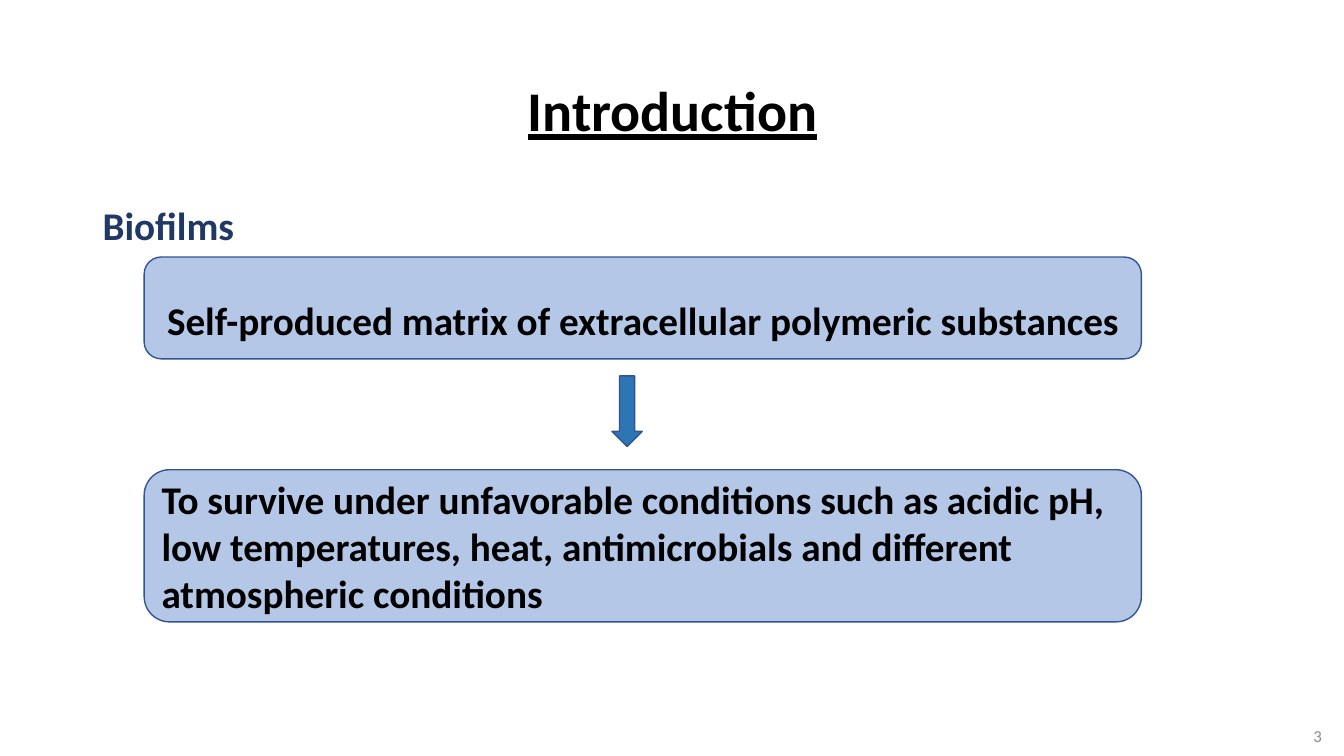
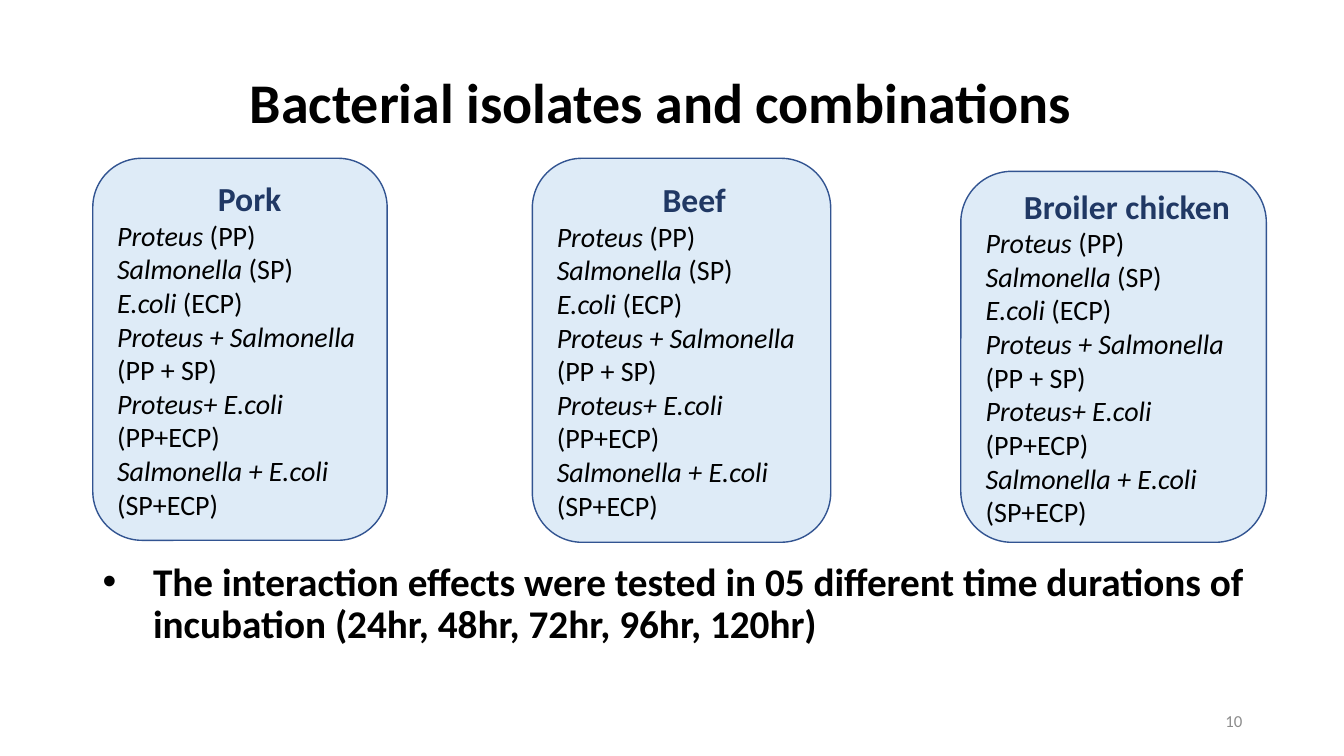
from pptx import Presentation
from pptx.dml.color import RGBColor
from pptx.enum.shapes import MSO_SHAPE
from pptx.enum.text import MSO_ANCHOR, PP_ALIGN
from pptx.oxml.ns import qn
from pptx.util import Inches, Pt
from lxml.etree import SubElement

FONT = "Calibri"
BLACK = RGBColor(0x00, 0x00, 0x00)
GREY = RGBColor(0x8C, 0x8C, 0x8C)
NAVY = RGBColor(0x20, 0x38, 0x64)
OUTLINE = RGBColor(0x32, 0x54, 0x91)
ARROW_BLUE = RGBColor(0x2E, 0x75, 0xB6)
MID_BLUE = RGBColor(0xB4, 0xC7, 0xE7)
PALE_BLUE = RGBColor(0xDE, 0xEB, 0xF7)

MARGIN = 0.92
ISOLATES = [
    ("Proteus", " (PP)"),
    ("Salmonella", " (SP)"),
    ("E.coli", " (ECP)"),
    ("Proteus + Salmonella ", "(PP + SP)"),
    ("Proteus+ E.coli ", "(PP+ECP)"),
    ("Salmonella + E.coli ", "(SP+ECP)"),
]


class Deck:
    """Holds the presentation, its style and the slide being built."""

    def __init__(self):
        self.prs = Presentation()
        self.prs.slide_width = Inches(13.33)
        self.prs.slide_height = Inches(7.5)
        self.slide = None

    def new_slide(self):
        self.slide = self.prs.slides.add_slide(self.prs.slide_layouts[6])

    def add_run(self, paragraph, text, size, color=BLACK, bold=False,
                italic=False, underline=False):
        run = paragraph.add_run()
        run.text = text
        font = run.font
        font.name, font.size, font.color.rgb = FONT, Pt(size), color
        font.bold, font.italic, font.underline = bold, italic, underline

    def indent(self, paragraph, left, first=0):
        properties = paragraph._p.get_or_add_pPr()
        properties.set("marL", str(Inches(left)))
        properties.set("indent", str(Inches(first)))
        return properties

    def text(self, at, text, size, align=PP_ALIGN.LEFT, anchor=MSO_ANCHOR.TOP,
             spacing=0.9, bullet=False, **style):
        box = self.slide.shapes.add_textbox(*map(Inches, at))
        frame = box.text_frame
        frame.word_wrap = True
        frame.vertical_anchor = anchor
        paragraph = frame.paragraphs[0]
        paragraph.alignment = align
        paragraph.line_spacing = spacing
        if bullet:
            properties = self.indent(paragraph, 0.5, -0.5)
            SubElement(properties, qn("a:buFont")).set("typeface", "Arial")
            SubElement(properties, qn("a:buChar")).set("char", "•")
        self.add_run(paragraph, text, size, **style)

    def title(self, at, text, align, underline=False):
        self.text(at, text, 40, align, MSO_ANCHOR.MIDDLE,
                  bold=True, underline=underline)

    def page_number(self, left, top, number):
        self.text((left, top, 3, 0.4), number, 12, PP_ALIGN.RIGHT,
                  MSO_ANCHOR.MIDDLE, spacing=1.0, color=GREY)

    def shape(self, kind, at, fill):
        shape = self.slide.shapes.add_shape(kind, *map(Inches, at))
        shape.shadow.inherit = False
        shape.fill.solid()
        shape.fill.fore_color.rgb = fill
        shape.line.color.rgb = OUTLINE
        shape.line.width = Pt(1)
        return shape

    def panel(self, at, fill):
        """Add a rounded box and return its text frame."""
        frame = self.shape(MSO_SHAPE.ROUNDED_RECTANGLE, at, fill).text_frame
        frame.word_wrap = True
        frame.vertical_anchor = MSO_ANCHOR.MIDDLE
        frame.paragraphs[0].alignment = PP_ALIGN.LEFT
        return frame

    def statement(self, top, height, text, align, spacing):
        frame = self.panel((1.43, top, 9.89, height), MID_BLUE)
        paragraph = frame.paragraphs[0]
        paragraph.alignment = align
        paragraph.line_spacing = spacing
        self.add_run(paragraph, text, 28, bold=True)

    def isolate_card(self, at, meat, heading_indent):
        frame = self.panel(at, PALE_BLUE)
        heading = frame.paragraphs[0]
        self.indent(heading, heading_indent)
        self.add_run(heading, meat, 24, NAVY, bold=True)
        for species, code in ISOLATES:
            paragraph = frame.add_paragraph()
            paragraph.alignment = PP_ALIGN.LEFT
            self.add_run(paragraph, species, 20, italic=True)
            self.add_run(paragraph, code, 20)


def build_introduction(deck):
    deck.new_slide()
    deck.title((MARGIN, 0.4, 11.5, 1.45), "Introduction", PP_ALIGN.CENTER,
               underline=True)
    deck.text((MARGIN, 2, 11.5, 0.55), "Biofilms", 28, color=NAVY, bold=True)
    deck.page_number(10.21, 7.1, "3")
    deck.statement(
        2.55, 1.01, "Self-produced matrix of extracellular polymeric substances",
        PP_ALIGN.CENTER, 1.5)
    deck.statement(
        4.66, 1.51,
        "To survive under unfavorable conditions such as acidic pH, "
        "low temperatures, heat, antimicrobials and different "
        "atmospheric conditions",
        PP_ALIGN.LEFT, 1.0)
    deck.shape(MSO_SHAPE.DOWN_ARROW, (6.07, 3.73, 0.3, 0.7), ARROW_BLUE)


def build_isolates(deck):
    deck.new_slide()
    deck.title((2.38, 0.32, 10, 1.45), "Bacterial isolates and combinations",
               PP_ALIGN.LEFT)
    deck.text(
        (MARGIN, 5.53, 11.65, 1.22),
        "The interaction effects were tested in 05 different time durations of "
        "incubation (24hr, 48hr, 72hr, 96hr, 120hr)",
        28, bullet=True, bold=True)
    deck.page_number(9.42, 6.95, "10")
    cards = [
        ((MARGIN, 1.57, 2.92, 3.79), "Pork", 1.0),
        ((5.28, 1.57, 2.96, 3.81), "Beef", 1.05),
        ((9.53, 1.7, 3.03, 3.68), "Broiler chicken", 0.38),
    ]
    for at, meat, heading_indent in cards:
        deck.isolate_card(at, meat, heading_indent)


def main():
    deck = Deck()
    build_introduction(deck)
    build_isolates(deck)
    deck.prs.save("out.pptx")


if __name__ == "__main__":
    main()
